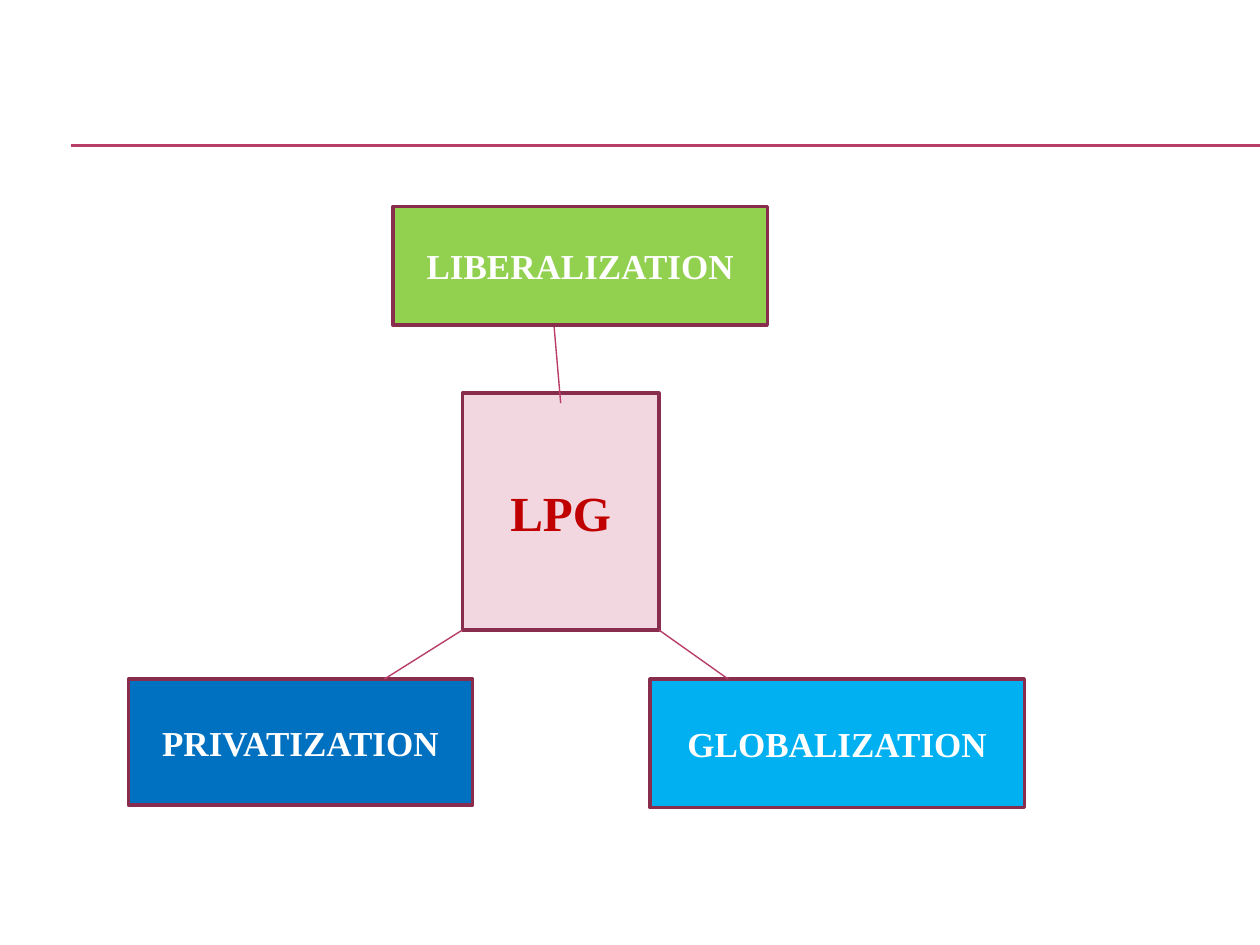
from lxml import etree
from pptx import Presentation
from pptx.dml.color import RGBColor
from pptx.enum.shapes import MSO_CONNECTOR, MSO_SHAPE
from pptx.enum.text import MSO_ANCHOR, PP_ALIGN
from pptx.oxml.ns import qn
from pptx.util import Inches, Pt

RECT = MSO_SHAPE.RECTANGLE
STRAIGHT = MSO_CONNECTOR.STRAIGHT
MIDDLE = MSO_ANCHOR.MIDDLE
CENTER = PP_ALIGN.CENTER

COLORS = {
    "rose": "B83D68",
    "border": "882D4D",
    "pink": "F2D7E0",
    "red": "C00000",
    "green": "92D050",
    "sky": "00B0F0",
    "blue": "0070C0",
    "white": "FFFFFF",
}


class Deck:
    font = "Times New Roman"

    def __init__(self, slide):
        self.slide = slide

    def color(self, name):
        return RGBColor.from_string(COLORS[name])

    def box(self, text, left, top, width, height, fill, ink="white", size=20):
        shape = self.slide.shapes.add_shape(
            RECT, Inches(left), Inches(top), Inches(width), Inches(height))
        shape.shadow.inherit = False
        shape.fill.solid()
        shape.fill.fore_color.rgb = self.color(fill)
        shape.line.color.rgb = self.color("border")
        shape.line.width = Pt(2)
        frame = shape.text_frame
        frame.word_wrap = True
        frame.vertical_anchor = MIDDLE
        para = frame.paragraphs[0]
        para.alignment = CENTER
        run = para.add_run()
        run.text = text
        run.font.name = self.font
        run.font.size = Pt(size)
        run.font.bold = True
        run.font.color.rgb = self.color(ink)

    def line(self, start, end, width=0.79, arrow=False):
        link = self.slide.shapes.add_connector(
            STRAIGHT, *map(Inches, start + end))
        link.line.color.rgb = self.color("rose")
        link.line.width = Pt(width)
        if arrow:
            etree.SubElement(link.line._get_or_add_ln(), qn("a:tailEnd"), type="arrow")
        etree.SubElement(link._element.spPr, qn("a:effectLst"))


def main():
    prs = Presentation()
    prs.slide_width, prs.slide_height = Inches(10), Inches(7.5)
    deck = Deck(prs.slides.add_slide(prs.slide_layouts[6]))

    for y in (1.15, 1.16):
        deck.line((0.56, y), (10, y), width=0.75)

    left, top, width, height = 3.67, 3.12, 1.56, 1.88
    right, bottom, row = left + width, top + height, 5.39
    deck.box("LPG", left, top, width, height, "pink", ink="red", size=28)
    deck.line((left + width / 2, 3.2), (4.37, 2.27), arrow=True)
    deck.box("LIBERALIZATION", 3.12, 1.64, 2.97, 0.94, "green")
    deck.box("GLOBALIZATION", 5.16, row, 2.97, 1.02, "sky")
    deck.box("PRIVATIZATION", 1.02, row, 2.73, 1, "blue")
    deck.line((right, bottom), (5.78, row))
    deck.line((left, bottom), (3.05, row))

    prs.save("out.pptx")


if __name__ == "__main__":
    main()
